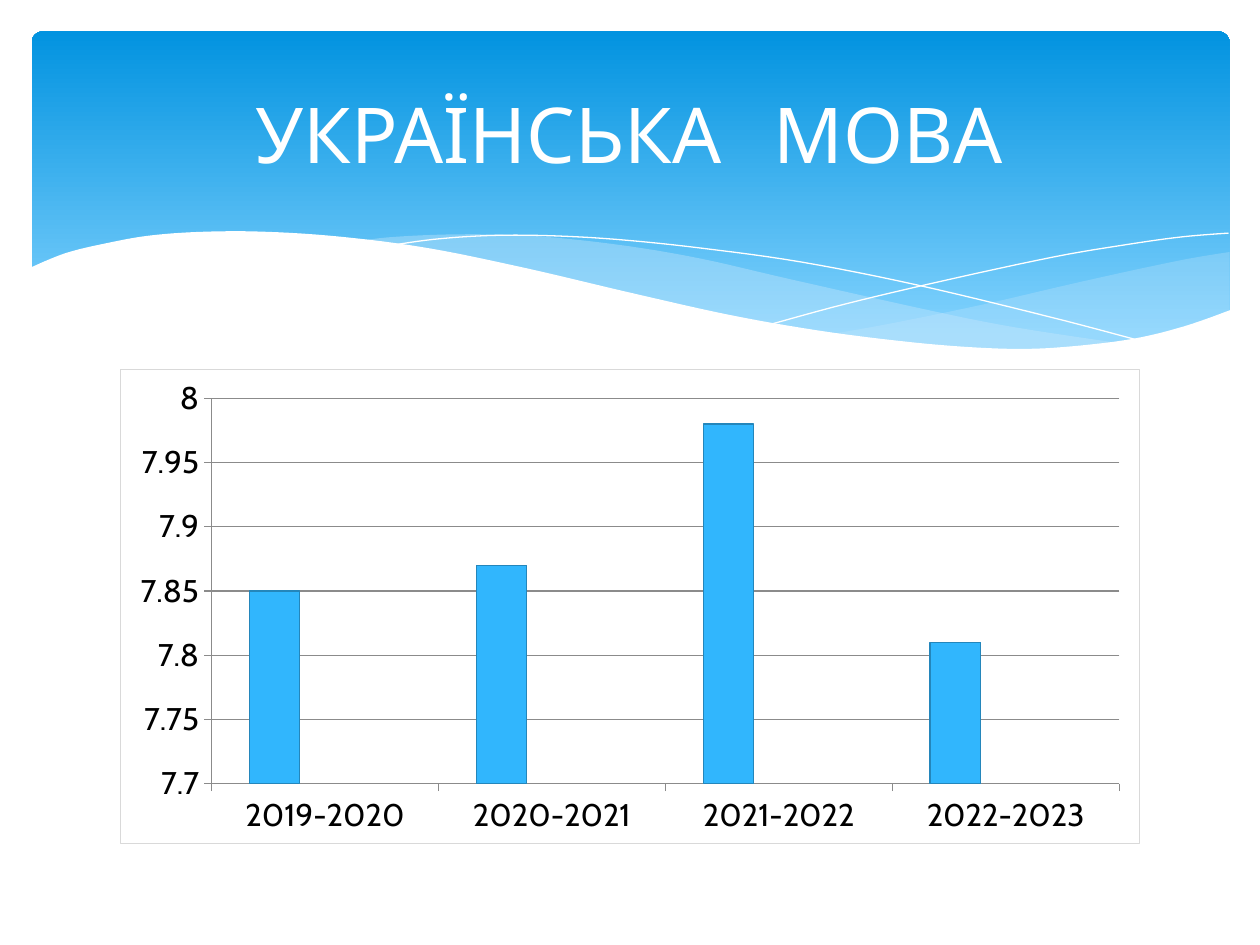
import pptx
import pptx.chart.data
import pptx.dml.color
import pptx.enum.chart
import pptx.enum.shapes
import pptx.enum.text
import pptx.oxml
import pptx.oxml.ns
import pptx.util
from lxml import etree

Inches = pptx.util.Inches
Pt = pptx.util.Pt
RGBColor = pptx.dml.color.RGBColor

WHITE = RGBColor(0xFF, 0xFF, 0xFF)
BLACK = RGBColor(0, 0, 0)
SKY = RGBColor(0x83, 0xD3, 0xFE)
DEEP_SKY = RGBColor(0x02, 0x93, 0xE0)
MIST = RGBColor(0xC6, 0xE7, 0xFC)
AXIS_GREY = RGBColor(0x8B, 0x8B, 0x8B)
FRAME_GREY = RGBColor(0xD9, 0xD9, 0xD9)
SERIES_COLORS = [
    (RGBColor(0x31, 0xB6, 0xFD), RGBColor(0x24, 0x86, 0xBB)),
    (RGBColor(0x45, 0x84, 0xD3), RGBColor(0x33, 0x61, 0x9C)),
    (RGBColor(0x5B, 0xD0, 0x78), RGBColor(0x43, 0x99, 0x58)),
]

YEARS = ["2019-2020", "2020-2021", "2021-2022", "2022-2023"]
GRADES = [7.85, 7.87, 7.98, 7.81]

RIGHT_SWELL_TOP = [(9.76, 2), (9.35, 2.07), (8.61, 2.23), (7.79, 2.42), (7.06, 2.57), (6.61, 2.65)]
RIGHT_SWELL_BOTTOM = [(6.61, 2.65), (7.19, 2.72), (7.69, 2.77), (8.24, 2.77), (8.72, 2.74),
                      (9.21, 2.65), (9.49, 2.57), (9.76, 2.47)]
LONG_SWELL_TOP = [(8.93, 2.73), (8.07, 2.6), (7.41, 2.47), (6.29, 2.22), (5.55, 2.05), (4.89, 1.94),
                  (4.2, 1.87), (3.61, 1.86), (3.13, 1.88), (2.86, 1.91)]
LONG_SWELL_BOTTOM = [(2.86, 1.91), (3.42, 1.99), (4.04, 2.11), (4.91, 2.32), (5.66, 2.48), (6.34, 2.61),
                     (6.95, 2.7), (7.48, 2.76), (8.07, 2.78), (8.57, 2.77), (8.93, 2.73)]
FALLING_LINE = [(3.09, 1.95), (3.44, 1.9), (3.87, 1.87), (4.33, 1.87), (4.89, 1.9), (5.57, 1.97),
                (6.36, 2.08), (7.27, 2.26), (8.31, 2.51), (9.07, 2.71)]
RISING_LINE = [(6.13, 2.57), (6.72, 2.41), (7.48, 2.23), (8.36, 2.04), (8.95, 1.94), (9.38, 1.88), (9.75, 1.85)]
WHITE_WAVE = [(9.77, 2.46), (9.4, 2.59), (8.99, 2.69), (8.5, 2.75), (8.09, 2.77), (7.61, 2.75),
              (7.08, 2.7), (6.47, 2.62), (5.79, 2.5), (5.03, 2.33), (4.18, 2.13), (3.4, 1.97),
              (2.71, 1.88), (2.11, 1.84), (1.61, 1.84), (1.19, 1.87), (0.85, 1.93), (0.52, 2.01), (0.23, 2.13)]


def smooth(knots, steps=6):
    padded = [knots[0], *knots, knots[-1]]
    curve = []
    for a, b, c, d in zip(padded, padded[1:], padded[2:], padded[3:]):
        for step in range(steps):
            t = step / steps
            curve.append(tuple(
                (2 * q + (r - p) * t + (2 * p - 5 * q + 4 * r - s) * t ** 2
                 + (3 * q - p - 3 * r + s) * t ** 3) / 2
                for p, q, r, s in zip(a, b, c, d)))
    return curve + [knots[-1]]


def write(frame, text, *, font, size, color, align, anchor):
    frame.word_wrap = True
    frame.vertical_anchor = anchor
    paragraph = frame.paragraphs[0]
    paragraph.alignment = align
    run = paragraph.add_run()
    run.text = text
    set_font(run.font, font, size, color)


def set_font(target, name, size, color):
    target.name = name
    target.size = Pt(size)
    target.color.rgb = color


def set_line(line, color, width=0.75):
    line.color.rgb = color
    line.width = Pt(width)


class SlideBuilder:
    font = "Cabin"

    def __init__(self, slide):
        self.slide = slide

    def banner(self, left, top, width, height):
        panel = self.slide.shapes.add_shape(
            pptx.enum.shapes.MSO_SHAPE.ROUNDED_RECTANGLE,
            Inches(left), Inches(top), Inches(width), Inches(height))
        panel.adjustments[0] = 0.034
        panel.shadow.inherit = False
        panel.line.fill.background()
        panel.fill.gradient()
        panel.fill.gradient_angle = 90
        for stop, color, position in zip(panel.fill.gradient_stops, (SKY, DEEP_SKY), (0.1, 1)):
            stop.color.rgb = color
            stop.position = position

    def curve(self, points, fill=None, opacity=100):
        corners = [(Inches(x), Inches(y)) for x, y in points]
        builder = self.slide.shapes.build_freeform(*corners[0])
        builder.add_line_segments(corners[1:], close=fill is not None)
        wave = builder.convert_to_shape()
        wave.shadow.inherit = False
        if fill is None:
            wave.fill.background()
            set_line(wave.line, WHITE, 0)
            return
        wave.line.fill.background()
        wave.fill.solid()
        wave.fill.fore_color.rgb = fill
        if opacity < 100:
            tint = wave.fill._xPr.find(".//" + pptx.oxml.ns.qn("a:srgbClr"))
            etree.SubElement(tint, pptx.oxml.ns.qn("a:alpha"), val=str(opacity * 1000))

    def title(self, text, left, top, width, height):
        box = self.slide.shapes.add_textbox(Inches(left), Inches(top), Inches(width), Inches(height))
        write(box.text_frame, text, font=self.font, size=44, color=WHITE,
              align=pptx.enum.text.PP_ALIGN.CENTER, anchor=pptx.enum.text.MSO_ANCHOR.MIDDLE)

    def column_chart(self, left, top, width, height):
        data = pptx.chart.data.CategoryChartData()
        data.categories = YEARS
        data.add_series("Series 1", GRADES)
        for name in ("Series 2", "Series 3"):
            data.add_series(name, [None] * len(YEARS))
        chart = self.slide.shapes.add_chart(
            pptx.enum.chart.XL_CHART_TYPE.COLUMN_CLUSTERED,
            Inches(left), Inches(top), Inches(width), Inches(height), data).chart
        chart.has_legend = False
        chart.has_title = False
        set_font(chart.font, "Arial", 10, BLACK)
        plot = chart.plots[0]
        plot.gap_width = 150
        plot.vary_by_categories = False
        for series, (fill, outline) in zip(plot.series, SERIES_COLORS):
            series.format.fill.solid()
            series.format.fill.fore_color.rgb = fill
            set_line(series.format.line, outline)
        for axis in (chart.category_axis, chart.value_axis):
            set_font(axis.tick_labels.font, self.font, 18, BLACK)
            axis.major_tick_mark = pptx.enum.chart.XL_TICK_MARK.OUTSIDE
            axis.minor_tick_mark = pptx.enum.chart.XL_TICK_MARK.NONE
            set_line(axis.format.line, AXIS_GREY)
        grades_axis = chart.value_axis
        grades_axis.minimum_scale = 7.7
        grades_axis.maximum_scale = 8
        grades_axis.major_unit = 0.05
        grades_axis.tick_labels.number_format = "General"
        grades_axis.tick_labels.number_format_is_linked = False
        set_line(grades_axis.major_gridlines.format.line, AXIS_GREY)
        frame = pptx.oxml.parse_xml(
            f'<c:spPr {pptx.oxml.ns.nsdecls("c", "a")}><a:noFill/><a:ln w="{Pt(0.75)}">'
            f'<a:solidFill><a:srgbClr val="{FRAME_GREY}"/></a:solidFill></a:ln></c:spPr>')
        chart._chartSpace.find(pptx.oxml.ns.qn("c:chart")).addnext(frame)


def main():
    deck = pptx.Presentation()
    deck.slide_width, deck.slide_height = Inches(10), Inches(7.5)
    page = SlideBuilder(deck.slides.add_slide(deck.slide_layouts[6]))
    page.banner(0.25, 0.25, 9.51, 2.7)
    page.curve(smooth(RIGHT_SWELL_TOP) + smooth(RIGHT_SWELL_BOTTOM), MIST, 29)
    page.curve(smooth(LONG_SWELL_TOP) + smooth(LONG_SWELL_BOTTOM), MIST, 40)
    page.curve(smooth(FALLING_LINE))
    page.curve(smooth(RISING_LINE))
    page.curve(smooth(WHITE_WAVE) + [(0.23, 3.29), (9.77, 3.29)], WHITE)
    page.column_chart(0.95, 2.93, 8.1, 3.77)
    page.title("УКРАЇНСЬКА   МОВА", 0.5, 0.37, 9, 1.37)
    deck.save("out.pptx")


if __name__ == "__main__":
    main()
